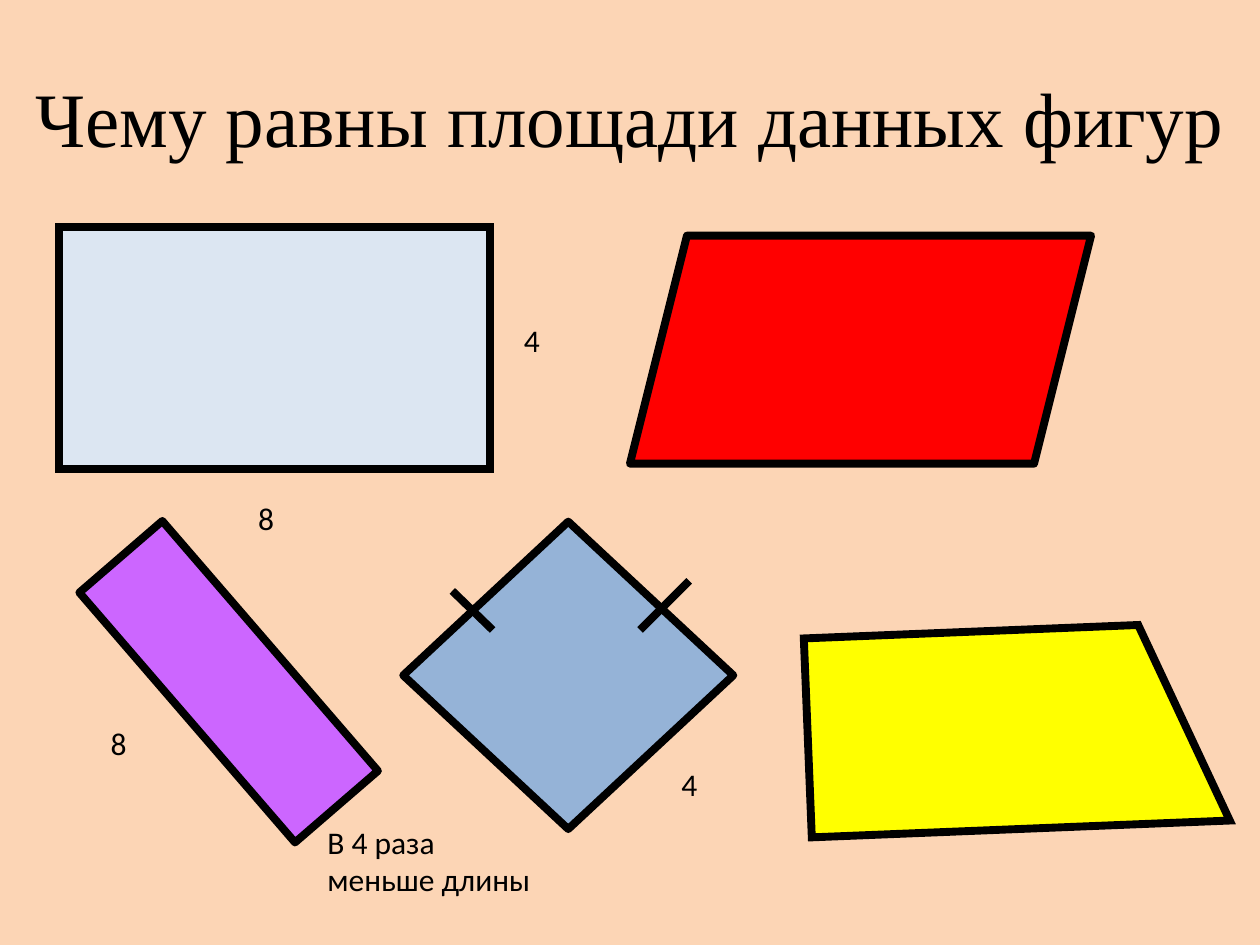
from dataclasses import dataclass

from lxml.etree import SubElement
from pptx import Presentation
from pptx.dml.color import RGBColor
from pptx.enum.shapes import MSO_CONNECTOR, MSO_SHAPE
from pptx.enum.text import MSO_ANCHOR, MSO_AUTO_SIZE, PP_ALIGN
from pptx.oxml.ns import qn
from pptx.util import Inches, Pt

# The slide is a grid of 100 columns by 75 rows
SLIDE_WIDTH, SLIDE_HEIGHT = Inches(10), Inches(7.5)
COLUMNS, ROWS = 100, 75


@dataclass(frozen=True)
class Theme:
    background: str = "FCD5B5"
    ink: str = "000000"
    pale_blue: str = "DCE6F2"
    blue: str = "95B3D7"
    violet: str = "CC66FF"
    red: str = "FF0000"
    yellow: str = "FFFF00"
    title_font: str = "Times New Roman"
    label_font: str = "Calibri"
    title_size: float = 44
    label_size: float = 18
    outline: float = 4.5


THEME = Theme()


@dataclass(frozen=True)
class Box:
    column: float
    row: float
    width: float
    height: float

    def lengths(self) -> tuple[int, int, int, int]:
        return (across(self.column), down(self.row),
                across(self.width), down(self.height))


@dataclass(frozen=True)
class Figure:
    preset: MSO_SHAPE
    box: Box
    color: str
    rotation: float = 0
    sharp_corners: bool = False


@dataclass(frozen=True)
class Label:
    text: str
    column: float
    row: float
    width: float = 3.9
    height: float = 4


@dataclass(frozen=True)
class Tick:
    start: tuple[float, float]
    end: tuple[float, float]


FIGURES = (
    Figure(MSO_SHAPE.RECTANGLE, Box(4.7, 18, 34.2, 19.2),
           THEME.pale_blue, sharp_corners=True),
    Figure(MSO_SHAPE.RECTANGLE, Box(13.8, 41, 8.7, 26.2),
           THEME.violet, rotation=319.2),
    Figure(MSO_SHAPE.DIAMOND, Box(32, 41.4, 26.2, 24.4), THEME.blue),
    Figure(MSO_SHAPE.PARALLELOGRAM, Box(50, 18.7, 36.6, 18.1), THEME.red),
    Figure(MSO_SHAPE.FLOWCHART_MANUAL_INPUT, Box(72.8, 41.3, 15.8, 33.2),
           THEME.yellow, rotation=87.7, sharp_corners=True),
)
TICKS = (
    Tick((35.9, 46.9), (39.1, 50)),
    Tick((54.7, 46.1), (50.8, 50)),
)
LABELS = (
    Label("8", 19.5, 39.1),
    Label("4", 40.6, 25),
    Label("8", 7.8, 57),
    Label("4", 53.1, 60.2),
    Label("В 4 раза меньше длины", 25, 64.8, width=19.5, height=7.1),
)


def across(columns: float) -> int:
    return round(SLIDE_WIDTH * columns / COLUMNS)


def down(rows: float) -> int:
    return round(SLIDE_HEIGHT * rows / ROWS)


def set_outline(line) -> None:
    line.color.rgb = RGBColor.from_string(THEME.ink)
    line.width = Pt(THEME.outline)


def add_text(slide, text: str, box: Box, *, font: str = THEME.label_font,
             size: float = THEME.label_size, align=PP_ALIGN.LEFT,
             anchor=MSO_ANCHOR.TOP, auto_size=MSO_AUTO_SIZE.SHAPE_TO_FIT_TEXT) -> None:
    frame = slide.shapes.add_textbox(*box.lengths()).text_frame
    frame.word_wrap = True
    frame.auto_size = auto_size
    frame.vertical_anchor = anchor
    paragraph = frame.paragraphs[0]
    paragraph.alignment = align
    run = paragraph.add_run()
    run.text = text
    run.font.name = font
    run.font.size = Pt(size)
    run.font.color.rgb = RGBColor.from_string(THEME.ink)


def add_figure(slide, figure: Figure) -> None:
    shape = slide.shapes.add_shape(figure.preset, *figure.box.lengths())
    shape.shadow.inherit = False
    shape.rotation = figure.rotation
    shape.fill.solid()
    shape.fill.fore_color.rgb = RGBColor.from_string(figure.color)
    set_outline(shape.line)
    join = "a:miter" if figure.sharp_corners else "a:round"
    SubElement(shape.line._get_or_add_ln(), qn(join))


def add_tick(slide, tick: Tick) -> None:
    connector = slide.shapes.add_connector(
        MSO_CONNECTOR.STRAIGHT, across(tick.start[0]), down(tick.start[1]),
        across(tick.end[0]), down(tick.end[1]))
    set_outline(connector.line)
    SubElement(connector._element.spPr, qn("a:effectLst"))


def main() -> None:
    presentation = Presentation()
    presentation.slide_width, presentation.slide_height = SLIDE_WIDTH, SLIDE_HEIGHT
    slide = presentation.slides.add_slide(presentation.slide_layouts[6])
    slide.background.fill.solid()
    slide.background.fill.fore_color.rgb = RGBColor.from_string(THEME.background)

    # Title
    add_text(slide, "Чему равны площади данных фигур", Box(0, 3, 100, 12.5),
             font=THEME.title_font, size=THEME.title_size, align=PP_ALIGN.CENTER,
             anchor=MSO_ANCHOR.MIDDLE, auto_size=MSO_AUTO_SIZE.NONE)

    # Figures, equal-side ticks and side lengths
    for figure in FIGURES:
        add_figure(slide, figure)
    for tick in TICKS:
        add_tick(slide, tick)
    for label in LABELS:
        add_text(slide, label.text,
                 Box(label.column, label.row, label.width, label.height))

    presentation.save("out.pptx")


if __name__ == "__main__":
    main()
